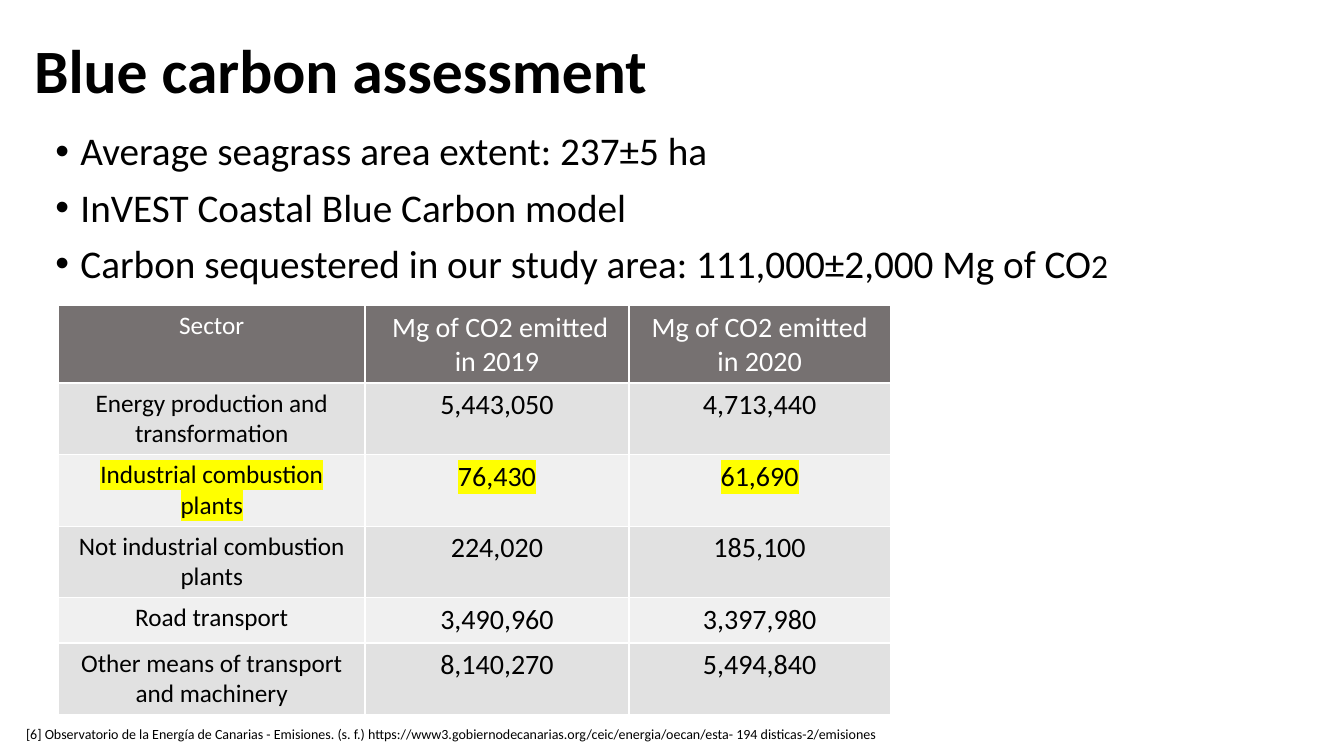
from lxml.etree import SubElement
from pptx import Presentation
from pptx.dml.color import RGBColor
from pptx.enum.text import MSO_ANCHOR, PP_ALIGN
from pptx.oxml.ns import qn
from pptx.util import Inches, Pt

BLACK, WHITE = "000000", "FFFFFF"
HEADER_FILL, BAND_FILLS = "767171", ("E1E1E1", "F0F0F0")
HIGHLIGHT = "FFFF00"
HIGHLIGHTED_SECTOR = "Industrial combustion plants"

BULLETS = [
    [("Average seagrass area extent: 237±5 ha", 28)],
    [("InVEST Coastal Blue Carbon model", 28)],
    [("Carbon sequestered in our study area: 111,000±2,000 Mg of CO", 28), ("2", 24)],
]
EMISSIONS = [
    ("Sector", " Mg of CO2 emitted in 2019", "Mg of CO2 emitted in 2020"),
    ("Energy production and transformation", "5,443,050", "4,713,440"),
    (HIGHLIGHTED_SECTOR, "76,430", "61,690"),
    ("Not industrial combustion plants", "224,020", "185,100"),
    ("Road transport", "3,490,960", "3,397,980"),
    ("Other means of transport and machinery", "8,140,270", "5,494,840"),
]
COLUMN_WIDTHS = (3.04, 2.62, 2.59)
ROW_HEIGHTS = (0.77, 0.71, 0.71, 0.71, 0.45, 0.71)


def add_run(paragraph, text, size, color=BLACK, bold=False):
    run = paragraph.add_run()
    run.text = text
    for name, value in {"size": Pt(size), "bold": bold, "name": "Calibri"}.items():
        setattr(run.font, name, value)
    run.font.color.rgb = RGBColor.from_string(color)
    return run


def add_text_frame(slide, left, top, width, height):
    box = slide.shapes.add_textbox(Inches(left), Inches(top), Inches(width), Inches(height))
    box.text_frame.word_wrap = True
    return box.text_frame


presentation = Presentation()
presentation.slide_width = Inches(13.33)
presentation.slide_height = Inches(7.5)
slide = presentation.slides.add_slide(presentation.slide_layouts[6])

# Bulleted findings
findings = add_text_frame(slide, 0.45, 1.26, 11.5, 4.76)
for index, parts in enumerate(BULLETS):
    paragraph = findings.add_paragraph() if index else findings.paragraphs[0]
    paragraph.line_spacing = 0.9
    paragraph.space_before = Pt(10)
    properties = paragraph._p.get_or_add_pPr()
    properties.set("marL", str(Inches(0.25)))
    properties.set("indent", str(Inches(-0.25)))
    SubElement(properties, qn("a:buFont"), typeface="Arial")
    SubElement(properties, qn("a:buChar"), char="•")
    for text, size in parts:
        add_run(paragraph, text, size)

# Emissions by sector
table = slide.shapes.add_table(
    len(EMISSIONS), len(COLUMN_WIDTHS), Inches(0.58), Inches(3.03),
    Inches(sum(COLUMN_WIDTHS)), Inches(sum(ROW_HEIGHTS))).table
table.first_row = False
table.horz_banding = False
for column, width in zip(table.columns, COLUMN_WIDTHS):
    column.width = Inches(width)
for row, height in zip(table.rows, ROW_HEIGHTS):
    row.height = Inches(height)

for row_index, values in enumerate(EMISSIONS):
    is_header = row_index == 0
    fill = HEADER_FILL if is_header else BAND_FILLS[(row_index - 1) % 2]
    for column_index, text in enumerate(values):
        cell = table.cell(row_index, column_index)
        paragraph = cell.text_frame.paragraphs[0]
        paragraph.alignment = PP_ALIGN.CENTER
        run = add_run(paragraph, text, 20 if column_index else 18,
                      WHITE if is_header else BLACK)
        if values[0] == HIGHLIGHTED_SECTOR:
            run_properties = run.font._element
            highlight = SubElement(run_properties, qn("a:highlight"))
            SubElement(highlight, qn("a:srgbClr"), val=HIGHLIGHT)
            run_properties.find(qn("a:solidFill")).addnext(highlight)
        cell_properties = cell._tc.get_or_add_tcPr()
        for side in ("a:lnL", "a:lnR", "a:lnT", "a:lnB"):
            border = SubElement(cell_properties, qn(side), w=str(Pt(1)))
            SubElement(SubElement(border, qn("a:solidFill")), qn("a:srgbClr"), val=WHITE)
        cell.fill.solid()
        cell.fill.fore_color.rgb = RGBColor.from_string(fill)

# Title
title = add_text_frame(slide, 0.24, 0, 11.5, 1.45)
title.vertical_anchor = MSO_ANCHOR.MIDDLE
title.paragraphs[0].line_spacing = 0.9
add_run(title.paragraphs[0], "Blue carbon assessment", 44, bold=True)

# Reference
reference = add_text_frame(slide, 0.16, 7.15, 9.54, 0.27)
add_run(reference.paragraphs[0],
        "[6] Observatorio de la Energía de Canarias - Emisiones. (s. f.) "
        "https://www3.gobiernodecanarias.org/ceic/energia/oecan/esta- 194 disticas-2/emisiones", 10)

presentation.save("out.pptx")
